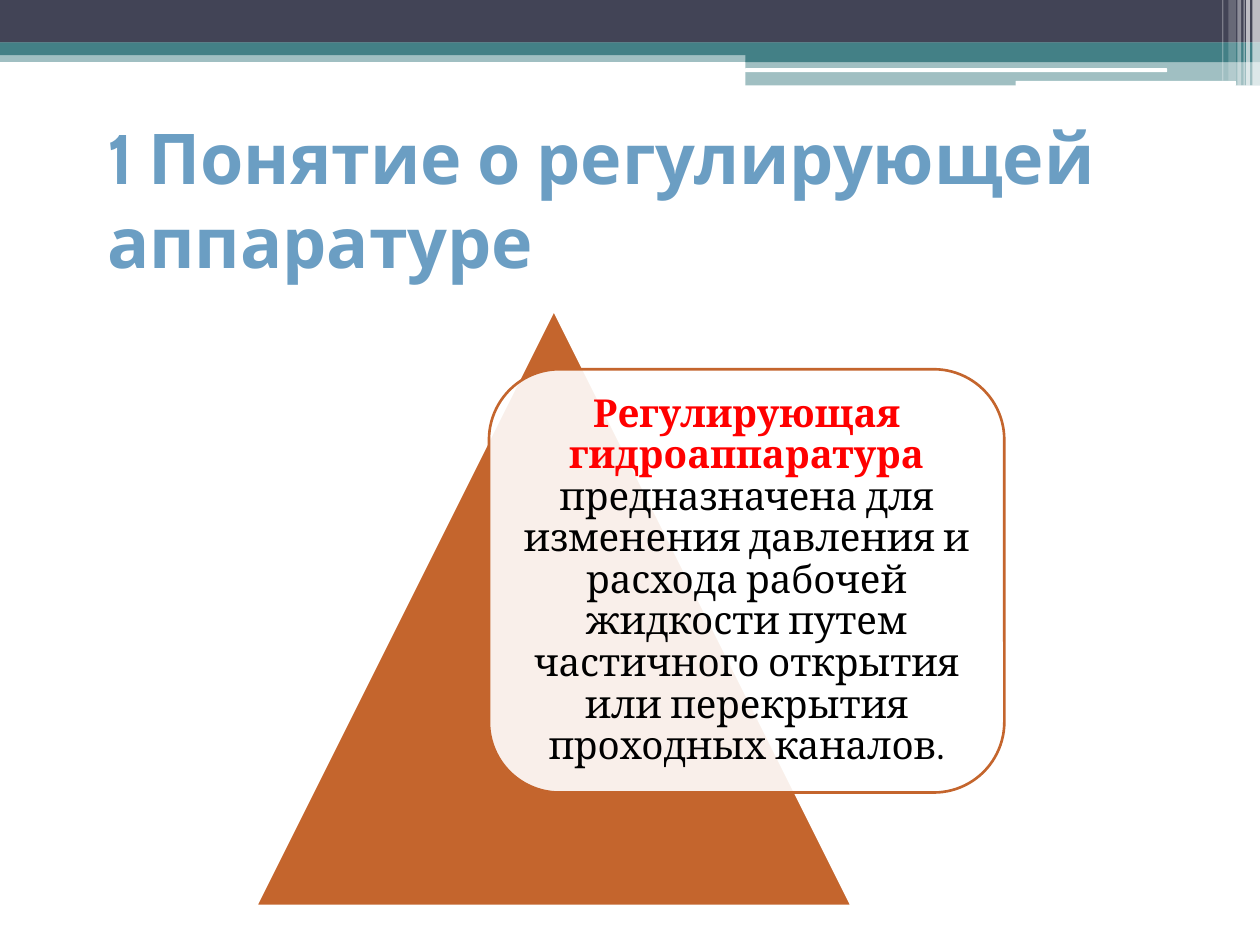
from lxml import etree
from pptx import Presentation
from pptx.dml.color import RGBColor
from pptx.enum import shapes, text
from pptx.oxml.ns import qn
from pptx.util import Pt

COLORS = {"navy": "424456", "teal": "438086", "white": "FFFFFF", "blue": "6B9EC3",
          "orange": "C4652D", "red": "FF0000", "black": "000000"}
KIND = shapes.MSO_SHAPE

TITLE = "1 Понятие о регулирующей аппаратуре"
DEFINITION = [
    ("Регулирующая гидроаппаратура ", "red", True),
    ("предназначена для изменения давления и расхода рабочей жидкости путем "
     "частичного открытия или перекрытия проходных каналов.", "black", False),
]

# Header bands: kind, left, top, width, height, colour, opacity in percent
BANDS = [
    (KIND.RECTANGLE, 0, 28.8, 720, 6.6, "teal", 50),
    (KIND.RECTANGLE, 0, 0, 720, 24.4, "navy", 100),
    (KIND.RECTANGLE, 0, 24.3, 720, 7.2, "teal", 100),
    (KIND.RECTANGLE, 426, 28.3, 294, 7.2, "teal", 100),
    (KIND.RECTANGLE, 426, 34.6, 294, 14.2, "teal", 50),
    (KIND.ROUNDED_RECTANGLE, 425.7, 39, 241.2, 2.2, "white", 100),
    (KIND.ROUNDED_RECTANGLE, 580.3, 46.2, 126, 2.9, "white", 100),
]
# Vertical stripes at the right end: left, width, height, opacity
STRIPES = [
    (715.6, 4.4, 49, 65), (712.1, 2.2, 49, 65), (710.6, 0.7, 49, 60),
    (707.1, 2.2, 49, 40), (702, 4.3, 46.1, 20), (698.4, 0.7, 46.1, 30),
]


def color(name):
    return RGBColor.from_string(COLORS[name])


def add_part(page, kind, left, top, width, height, fill, opacity=100, line=None):
    part = page.shapes.add_shape(kind, Pt(left), Pt(top), Pt(width), Pt(height))
    part.shadow.inherit = False
    part.fill.solid()
    part.fill.fore_color.rgb = color(fill)
    if opacity < 100:
        tint = part.fill._xPr.find(qn("a:solidFill"))[0]
        etree.SubElement(tint, qn("a:alpha"), val=str(opacity * 1000))
    if line:
        part.line.color.rgb = color(line)
        part.line.width = Pt(1.5)
    else:
        part.line.fill.background()
    return part


def add_span(para, words, font, size, tone, bold):
    span = para.add_run()
    span.text = words
    span.font.name, span.font.size, span.font.bold = font, Pt(size), bold
    span.font.color.rgb = color(tone)


def main():
    deck = Presentation()
    deck.slide_width, deck.slide_height = Pt(720), Pt(540)
    page = deck.slides.add_slide(deck.slide_layouts[5])

    # Header decoration
    for band in BANDS:
        add_part(page, *band)
    for left, width, height, opacity in STRIPES:
        add_part(page, KIND.RECTANGLE, left, 0, width, height, "white", opacity)

    # Title
    title = page.shapes.title
    title.left, title.top, title.width, title.height = Pt(54), Pt(71.3), Pt(648), Pt(84.2)
    frame = title.text_frame
    frame.auto_size = text.MSO_AUTO_SIZE.NONE
    frame.vertical_anchor = text.MSO_ANCHOR.MIDDLE
    para = frame.paragraphs[0]
    para.alignment = text.PP_ALIGN.LEFT
    add_span(para, TITLE, "Cabin", 40, "blue", True)

    # Pyramid
    add_part(page, KIND.ISOSCELES_TRIANGLE, 146.2, 177.1, 340.6, 340.6, "orange", line="white")

    # Definition card
    card = add_part(page, KIND.ROUNDED_RECTANGLE, 279.4, 211, 294.5, 241.9, "white", 90, "orange")
    frame = card.text_frame
    frame.word_wrap = True
    frame.vertical_anchor = text.MSO_ANCHOR.MIDDLE
    frame.margin_left = frame.margin_right = frame.margin_top = frame.margin_bottom = 0
    para = frame.paragraphs[0]
    para.alignment = text.PP_ALIGN.CENTER
    para.line_spacing = 0.9
    for words, tone, bold in DEFINITION:
        add_span(para, words, "Cambria", 22, tone, bold)

    deck.save("out.pptx")


if __name__ == "__main__":
    main()
